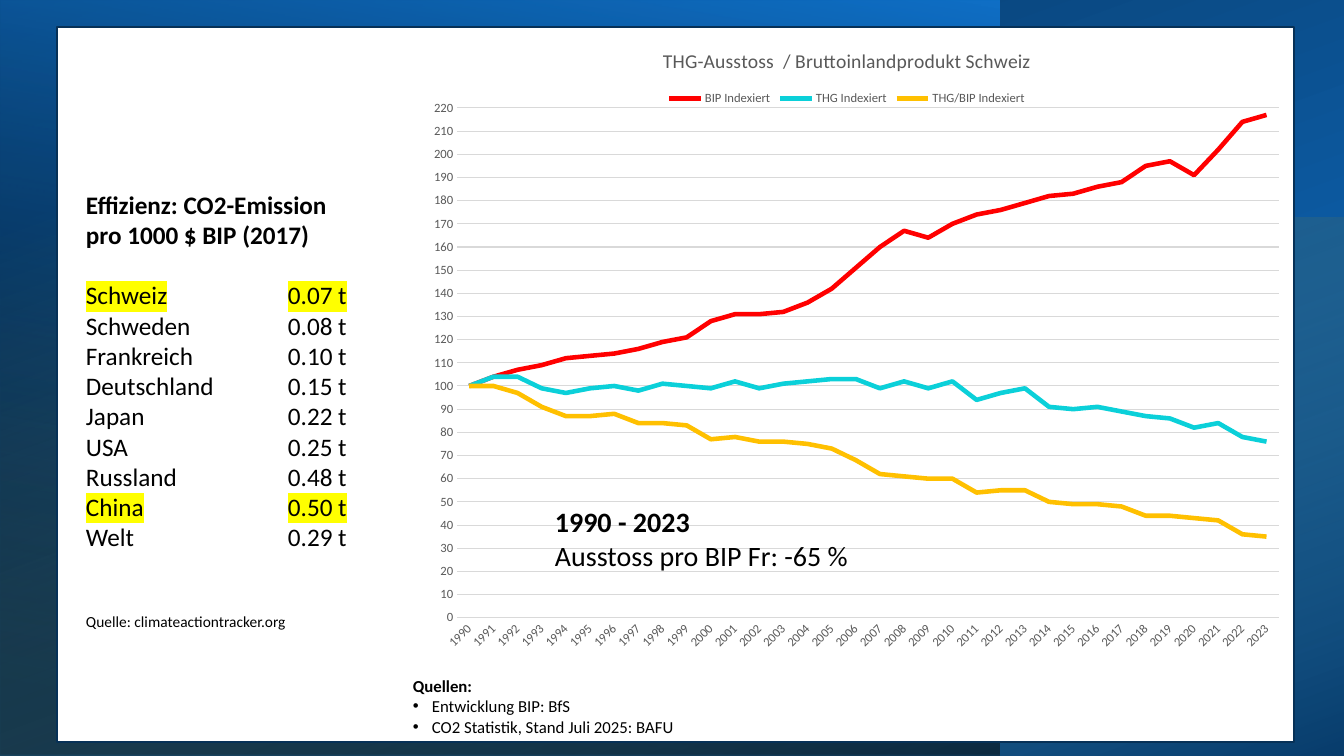
from lxml import etree
from pptx import Presentation
from pptx.chart.data import CategoryChartData
from pptx.dml.color import RGBColor
from pptx.enum.chart import XL_CHART_TYPE, XL_LEGEND_POSITION, XL_TICK_MARK
from pptx.enum.shapes import MSO_SHAPE
from pptx.enum.text import MSO_ANCHOR, PP_ALIGN
from pptx.oxml import parse_xml
from pptx.oxml.ns import nsdecls, qn
from pptx.util import Emu, Pt

RECT = MSO_SHAPE.RECTANGLE
LINE = XL_CHART_TYPE.LINE
LEGEND_TOP = XL_LEGEND_POSITION.TOP
NO_TICK = XL_TICK_MARK.NONE
TOP, LEFT = MSO_ANCHOR.TOP, PP_ALIGN.LEFT

BLACK = RGBColor(0x00, 0x00, 0x00)
WHITE = RGBColor(0xFF, 0xFF, 0xFF)
NAVY = RGBColor(0x07, 0x31, 0x57)
GREY = RGBColor(0x59, 0x59, 0x59)
GRID = RGBColor(0xD9, 0xD9, 0xD9)
RED = RGBColor(0xFF, 0x00, 0x00)
CYAN = RGBColor(0x0B, 0xD0, 0xD9)
AMBER = RGBColor(0xFF, 0xC0, 0x00)
YELLOW = RGBColor(0xFF, 0xFF, 0x00)
BLUE = RGBColor(0x0F, 0x6F, 0xC6)
DEEP_BLUE = RGBColor(0x08, 0x37, 0x63)
GREEN = RGBColor(0xB0, 0xDF, 0xA1)

FONT = "Calibri"
SLIDE_W, SLIDE_H = 1344, 756
SCALE = 12192000 / SLIDE_W

# Box, rotation, gradient angle, stops as (position %, colour, opacity %)
BACKDROP = [
    ((294, -294, 756, 1344), 270, 200, [(8, BLUE, 100), (100, DEEP_BLUE, 100)]),
    ((0, 0, 1000, 756), 180, 80, [(8, BLACK, 52), (100, BLUE, 100)]),
    ((402, -185, 539, 1345), 270, 20, [(0, GREEN, 0), (100, BLACK, 46)]),
]
EFFICIENCY = [
    ("Schweiz", "0.07 t"), ("Schweden", "0.08 t"), ("Frankreich", "0.10 t"),
    ("Deutschland", "0.15 t"), ("Japan", "0.22 t"), ("USA", "0.25 t"),
    ("Russland", "0.48 t"), ("China", "0.50 t"), ("Welt", "0.29 t"),
]
HIGHLIGHTED = ("Schweiz", "China")
YEARS = range(1990, 2024)
SERIES = [
    ("BIP Indexiert", RED,
     [100, 104, 107, 109, 112, 113, 114, 116, 119, 121, 128, 131, 131, 132, 136, 142, 151,
      160, 167, 164, 170, 174, 176, 179, 182, 183, 186, 188, 195, 197, 191, 202, 214, 217]),
    ("THG Indexiert", CYAN,
     [100, 104, 104, 99, 97, 99, 100, 98, 101, 100, 99, 102, 99, 101, 102, 103, 103,
      99, 102, 99, 102, 94, 97, 99, 91, 90, 91, 89, 87, 86, 82, 84, 78, 76]),
    ("THG/BIP Indexiert", AMBER,
     [100, 100, 97, 91, 87, 87, 88, 84, 84, 83, 77, 78, 76, 76, 75, 73, 68,
      62, 61, 60, 60, 54, 55, 55, 50, 49, 49, 48, 44, 44, 43, 42, 36, 35]),
]


def px(n):
    return Emu(round(n * SCALE))


def emu_box(box):
    return [px(n) for n in box]


def set_font(font, size, color=BLACK, bold=False):
    for name, value in {"name": FONT, "size": Pt(size), "bold": bold}.items():
        setattr(font, name, value)
    font.color.rgb = color


def add_rect(slide, box):
    sp = slide.shapes.add_shape(RECT, *emu_box(box))
    sp.shadow.inherit = False
    sp.line.fill.background()
    return sp


def add_text(slide, box, wrap=False):
    tf = slide.shapes.add_textbox(*emu_box(box)).text_frame
    tf.word_wrap = wrap
    tf.vertical_anchor = TOP
    return tf


def add_line(tf, text, size, bold=False, after=0):
    p = tf.paragraphs[0] if not tf.paragraphs[0].runs else tf.add_paragraph()
    p.alignment = LEFT
    p.space_after = Pt(after)
    r = p.add_run()
    r.text = text
    set_font(r.font, size, bold=bold)
    return p


def backdrop(slide):
    for box, rotation, angle, stops in BACKDROP:
        sp = add_rect(slide, box)
        sp.rotation = rotation
        spPr = sp._element.spPr
        spPr.find(qn("a:xfrm")).set("flipH", "1")
        gs = "".join(
            f'<a:gs pos="{pos * 1000}"><a:srgbClr val="{color}">'
            f'<a:alpha val="{alpha * 1000}"/></a:srgbClr></a:gs>'
            for pos, color, alpha in stops)
        spPr.find(qn("a:prstGeom")).addnext(parse_xml(
            f'<a:gradFill {nsdecls("a")}><a:gsLst>{gs}</a:gsLst>'
            f'<a:lin ang="{angle * 60000}" scaled="0"/></a:gradFill>'))


def panel(slide, box):
    sp = add_rect(slide, box)
    sp.fill.solid()
    sp.fill.fore_color.rgb = WHITE
    sp.line.color.rgb = NAVY
    sp.line.width = Pt(1)


def efficiency_list(slide, box):
    tf = add_text(slide, box)
    add_line(tf, "Effizienz: CO2-Emission", 18, True)
    add_line(tf, "pro 1000 $ BIP (2017)", 18, True, after=21.6)
    for country, value in EFFICIENCY:
        last = country == EFFICIENCY[-1][0]
        p = add_line(tf, f"{country}\t{value}", 18, after=43.2 if last else 0)
        tabs = etree.SubElement(p._p.get_or_add_pPr(), qn("a:tabLst"))
        etree.SubElement(tabs, qn("a:tab"), pos=str(px(202)), algn="l")
        if country in HIGHLIGHTED:
            fill = p.runs[0]._r.rPr.find(qn("a:solidFill"))
            fill.addnext(parse_xml(
                f'<a:highlight {nsdecls("a")}><a:srgbClr val="{YELLOW}"/></a:highlight>'))
    add_line(tf, "Quelle: climateactiontracker.org", 11)


def sources(slide, box):
    tf = add_text(slide, box, wrap=True)
    add_line(tf, "Quellen:", 12, True)
    for text in ("Entwicklung BIP: BfS", "CO2 Statistik, Stand Juli 2025: BAFU"):
        pPr = add_line(tf, text, 12)._p.get_or_add_pPr()
        pPr.set("marL", str(px(19)))
        pPr.set("indent", str(-px(19)))
        etree.SubElement(pPr, qn("a:buFont"), typeface="Arial")
        etree.SubElement(pPr, qn("a:buChar"), char="•")


def manual_layout(x, y, w, h, inner=False):
    target = '<c:layoutTarget val="inner"/>' if inner else ""
    modes = '<c:xMode val="edge"/><c:yMode val="edge"/>'
    sizes = "".join(f'<c:{k} val="{v}"/>' for k, v in zip("xywh", (x, y, w, h)))
    return parse_xml(f'<c:layout {nsdecls("c")}><c:manualLayout>{target}{modes}{sizes}'
                     '</c:manualLayout></c:layout>')


def emission_chart(slide, box):
    data = CategoryChartData()
    data.categories = [str(year) for year in YEARS]
    for name, _, values in SERIES:
        data.add_series(name, values)
    chart = slide.shapes.add_chart(LINE, *emu_box(box), data).chart
    set_font(chart.font, 10)
    plot = chart.plots[0]
    plot.vary_by_categories = False
    for series, (_, color, _) in zip(plot.series, SERIES):
        series.smooth = False
        series.format.line.color.rgb = color
        series.format.line.width = Pt(3.25)

    # Title and legend
    chart.has_title = True
    tf = chart.chart_title.text_frame
    tf.text = "THG-Ausstoss  / Bruttoinlandprodukt Schweiz"
    set_font(tf.paragraphs[0].runs[0].font, 14, GREY)
    chart.has_legend = True
    legend = chart.legend
    legend.position = LEGEND_TOP
    legend.include_in_layout = False
    set_font(legend.font, 9, GREY)

    # Placement of legend and plot
    plot_area = plot._element.getparent()
    for parent in (plot_area, legend._element):
        for old in parent.findall(qn("c:layout")):
            parent.remove(old)
    plot_area.insert(0, manual_layout(0.054, 0.13, 0.94, 0.808, inner=True))
    legend._element.find(qn("c:legendPos")).addnext(manual_layout(0.29, 0.1, 0.42, 0.03))

    # Axes
    years, index = chart.category_axis, chart.value_axis
    for axis in (years, index):
        axis.major_tick_mark = axis.minor_tick_mark = NO_TICK
        set_font(axis.tick_labels.font, 9, GREY)
    years._element.find(qn("c:txPr")).find(qn("a:bodyPr")).set("rot", str(-45 * 60000))
    scale = {"minimum_scale": 0, "maximum_scale": 220, "major_unit": 10}
    for name, value in scale.items():
        setattr(index, name, value)
    index.tick_labels.number_format = "0"
    index.tick_labels.number_format_is_linked = False
    for line in (years.format.line, index.major_gridlines.format.line):
        line.color.rgb = GRID
        line.width = Pt(0.75)
    index.format.line.fill.background()


def key_figure(slide, box):
    tf = add_text(slide, box)
    add_line(tf, "1990 - 2023", 20, True)
    add_line(tf, "Ausstoss pro BIP Fr: -65 %", 20)


def main():
    prs = Presentation()
    prs.slide_width, prs.slide_height = px(SLIDE_W), px(SLIDE_H)
    slide = prs.slides.add_slide(prs.slide_layouts[6])
    backdrop(slide)
    panel(slide, (57, 27, 1237, 715))
    efficiency_list(slide, (76, 184, 283, 457))
    sources(slide, (403, 671, 522, 72))
    emission_chart(slide, (410, 26, 874, 631))
    key_figure(slide, (545, 500, 316, 78))
    prs.save("out.pptx")


if __name__ == "__main__":
    main()
